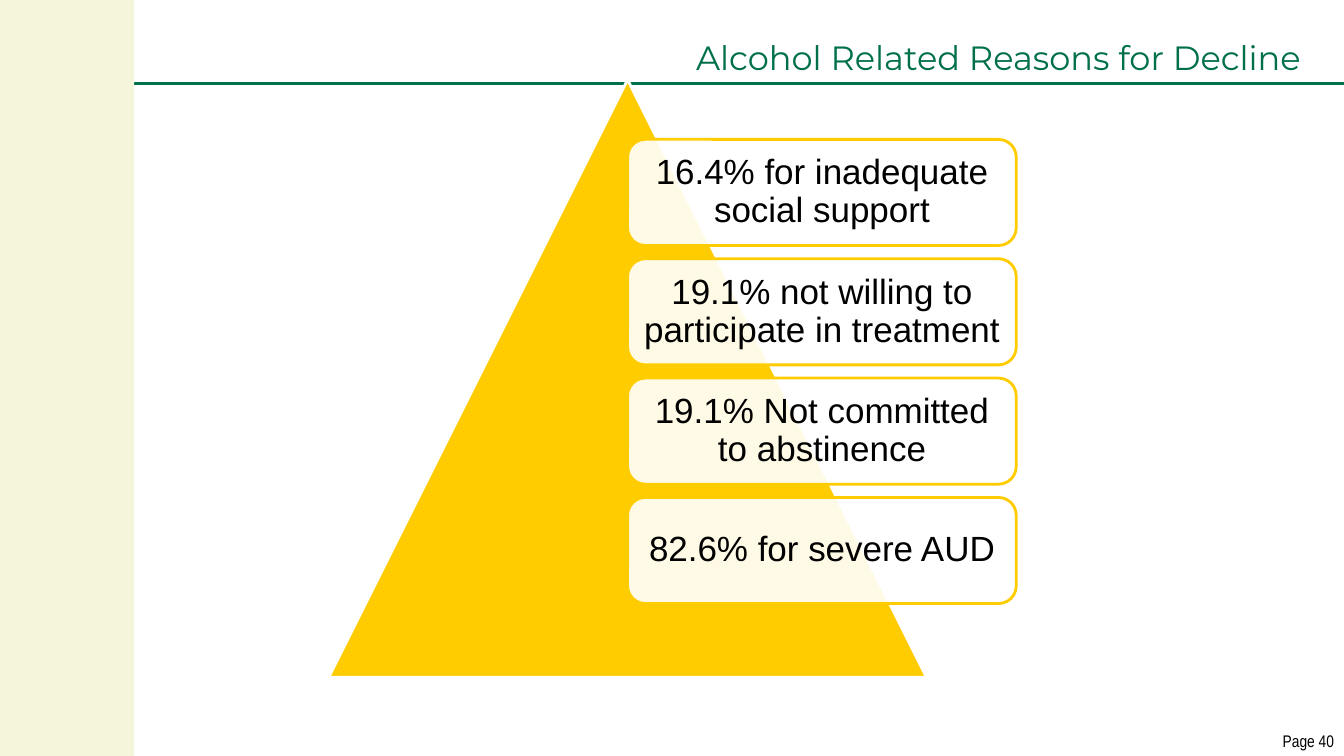
from lxml import etree
from pptx import Presentation
from pptx.dml.color import RGBColor
from pptx.enum.shapes import MSO_CONNECTOR, MSO_SHAPE
from pptx.enum.text import MSO_ANCHOR, MSO_AUTO_SIZE, PP_ALIGN
from pptx.oxml.ns import qn
from pptx.util import Inches, Pt

GREEN = RGBColor(0x00, 0x70, 0x4A)
GOLD = RGBColor(0xFF, 0xCC, 0x00)
BEIGE = RGBColor(0xF5, 0xF5, 0xDC)
WHITE = RGBColor(0xFF, 0xFF, 0xFF)
BLACK = RGBColor(0x00, 0x00, 0x00)

STRAIGHT = MSO_CONNECTOR.STRAIGHT
RECTANGLE = MSO_SHAPE.RECTANGLE
ROUNDED = MSO_SHAPE.ROUNDED_RECTANGLE
TRIANGLE = MSO_SHAPE.ISOSCELES_TRIANGLE
MIDDLE = MSO_ANCHOR.MIDDLE
BOTTOM = MSO_ANCHOR.BOTTOM
CENTER = PP_ALIGN.CENTER
RIGHT = PP_ALIGN.RIGHT
NO_FIT = MSO_AUTO_SIZE.NONE

PAGE_WIDTH, PAGE_HEIGHT = 13.33, 7.5
REASONS = [
    "16.4% for inadequate social support",
    "19.1% not willing to participate in treatment",
    "19.1% Not committed to abstinence",
    "82.6% for severe AUD",
]


def write_line(frame, text, font_name, size, color, align, spacing=1.0):
    para = frame.paragraphs[0]
    para.alignment = align
    para.line_spacing = spacing
    span = para.add_run()
    span.text = text
    span.font.name = font_name
    span.font.size = Pt(size)
    span.font.color.rgb = color


def add_block(page, kind, left, top, width, height, fill, line=None):
    block = page.shapes.add_shape(
        kind, Inches(left), Inches(top), Inches(width), Inches(height))
    block.shadow.inherit = False
    block.fill.solid()
    block.fill.fore_color.rgb = fill
    if line is None:
        block.line.fill.background()
    else:
        block.line.color.rgb = line
        block.line.width = Pt(2)
    return block


def set_opacity(block, percent):
    color = block.fill._xPr.find(qn("a:solidFill"))[0]
    etree.SubElement(color, qn("a:alpha")).set("val", str(percent * 1000))


def add_frame(page, rule_top, band_width):
    rule = page.shapes.add_connector(
        STRAIGHT, 0, Inches(rule_top), Inches(PAGE_WIDTH), Inches(rule_top))
    rule.line.color.rgb = GREEN
    rule.line.width = Pt(2.25)
    etree.SubElement(rule._element.spPr, qn("a:effectLst"))
    add_block(page, RECTANGLE, 0, 0, band_width, PAGE_HEIGHT, BEIGE)


def add_page_number(page, text, width, height):
    box = page.shapes.add_textbox(
        Inches(PAGE_WIDTH - width), Inches(PAGE_HEIGHT - height),
        Inches(width), Inches(height))
    box.text_frame.word_wrap = False
    write_line(box.text_frame, text, "Arial Narrow", 12, BLACK, RIGHT)


def set_title(page, text, left, top, width, height):
    title = page.shapes.title
    title.left, title.top = Inches(left), Inches(top)
    title.width, title.height = Inches(width), Inches(height)
    frame = title.text_frame
    frame.auto_size = NO_FIT
    frame.word_wrap = True
    frame.vertical_anchor = BOTTOM
    write_line(frame, text, "Montserrat", 24, GREEN, RIGHT, 0.9)


def add_pyramid(page, reasons, left, top, side):
    add_block(page, TRIANGLE, left, top, side, side, GOLD, WHITE)
    card_width = side * 0.65
    card_height = side * 0.71 / len(reasons)
    pitch = card_height * 9 / 8
    for index, reason in enumerate(reasons):
        card = add_block(
            page, ROUNDED, left + side / 2, top + side / 10 + index * pitch,
            card_width, card_height, WHITE, GOLD)
        set_opacity(card, 90)
        frame = card.text_frame
        frame.word_wrap = True
        frame.vertical_anchor = MIDDLE
        frame.margin_left = frame.margin_right = Inches(0.1)
        frame.margin_top = frame.margin_bottom = Inches(0.1)
        write_line(frame, reason, "Arial", 25, BLACK, CENTER, 0.9)


def main():
    deck = Presentation()
    deck.slide_width = Inches(PAGE_WIDTH)
    deck.slide_height = Inches(PAGE_HEIGHT)
    page = deck.slides.add_slide(deck.slide_layouts[5])
    add_frame(page, 0.83, 1.33)
    add_page_number(page, "Page 40", 0.73, 0.3)
    set_title(page, "Alcohol Related Reasons for Decline", 2.33, 0, 10.67, 0.82)
    add_pyramid(page, REASONS, 3.26, 0.79, 5.93)
    deck.save("out.pptx")


if __name__ == "__main__":
    main()
